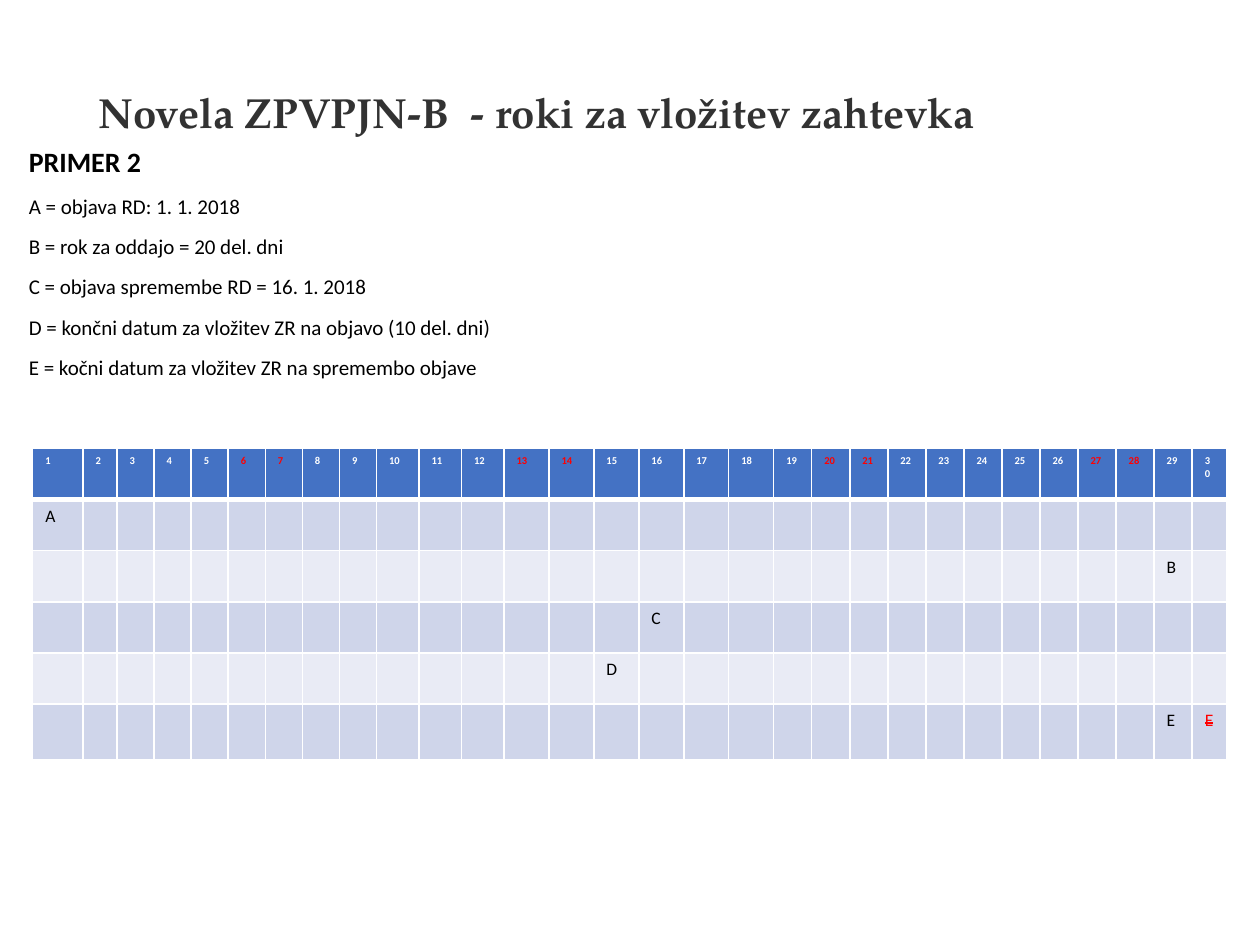
from dataclasses import dataclass, field

from lxml.etree import SubElement
from pptx import Presentation
from pptx.dml.color import RGBColor
from pptx.enum.text import MSO_ANCHOR
from pptx.oxml.ns import qn
from pptx.slide import Slide
from pptx.util import Pt

COLORS = {
    "title": "323232",
    "text": "000000",
    "white": "FFFFFF",
    "holiday": "FF0000",
    "header": "4472C4",
    "odd": "CFD5EA",
    "even": "E9EBF5",
}
WEEKEND_DAYS = {6, 7, 13, 14, 20, 21, 27, 28}
DAY_WIDTHS = [28.8, 19.4] + [21.2] * 7 + [24.3] * 3 + [25.7] * 6 + [21.75] * 11 + [19.8]
ROW_HEIGHTS = [29.2] * 5 + [32]
EVENTS = {
    (1, 1): "A",
    (2, 29): "B",
    (3, 16): "C",
    (4, 15): "D",
    (5, 29): "E",
    (5, 30): "E",
}
STRUCK_EVENT = (5, 30)
LEGEND = [
    "A = objava RD: 1. 1. 2018",
    "B = rok za oddajo = 20 del. dni",
    "C = objava spremembe RD = 16. 1. 2018",
    "D = končni datum za vložitev ZR na objavo (10 del. dni)",
    "E = kočni datum za vložitev ZR na spremembo objave",
]


def write(para, text, size=10, color="text", bold=False, font="Calibri", strike=False):
    span = para.add_run()
    span.text = text
    span.font.size = Pt(size)
    span.font.bold = bold
    span.font.name = font
    span.font.color.rgb = RGBColor.from_string(COLORS[color])
    if strike:
        span.font._element.set("strike", "sngStrike")


@dataclass
class PageBuilder:
    page: Slide
    line_spacing: float = 0.9
    space_before: float = 10
    border: float = 1
    header_border: float = 3
    body_format: dict = field(default_factory=lambda: {"size": 12})

    def text_box(self, left, top, width, height, lines, anchor=MSO_ANCHOR.TOP):
        box = self.page.shapes.add_textbox(Pt(left), Pt(top), Pt(width), Pt(height))
        frame = box.text_frame
        frame.word_wrap = True
        frame.vertical_anchor = anchor
        for index, (text, style) in enumerate(lines):
            para = frame.add_paragraph() if index else frame.paragraphs[0]
            para.line_spacing = self.line_spacing
            if index:
                para.space_before = Pt(self.space_before)
            write(para, text, **style)

    def style_cell(self, cell, row):
        properties = cell._tc.get_or_add_tcPr()
        widths = {
            "a:lnL": self.border,
            "a:lnR": self.border,
            "a:lnT": self.header_border if row == 1 else self.border,
            "a:lnB": self.header_border if row == 0 else self.border,
        }
        for tag, width in widths.items():
            line = SubElement(properties, qn(tag), w=str(Pt(width)))
            fill = SubElement(line, qn("a:solidFill"))
            SubElement(fill, qn("a:srgbClr"), val=COLORS["white"])
        shade = "header" if row == 0 else "odd" if row % 2 else "even"
        cell.fill.solid()
        cell.fill.fore_color.rgb = RGBColor.from_string(COLORS[shade])

    def calendar(self, left, top):
        table = self.page.shapes.add_table(
            len(ROW_HEIGHTS), len(DAY_WIDTHS),
            Pt(left), Pt(top), Pt(sum(DAY_WIDTHS)), Pt(sum(ROW_HEIGHTS)),
        ).table
        for column, width in zip(table.columns, DAY_WIDTHS):
            column.width = Pt(width)
        for row, height in enumerate(ROW_HEIGHTS):
            table.rows[row].height = Pt(height)
            for day in range(1, len(DAY_WIDTHS) + 1):
                cell = table.cell(row, day - 1)
                self.style_cell(cell, row)
                para = cell.text_frame.paragraphs[0]
                if row == 0:
                    color = "holiday" if day in WEEKEND_DAYS else "white"
                    write(para, str(day), size=6, color=color, bold=True)
                elif (row, day) in EVENTS:
                    struck = (row, day) == STRUCK_EVENT
                    color = "holiday" if struck else "text"
                    write(para, EVENTS[row, day], color=color, strike=struck)


def main():
    deck = Presentation()
    deck.slide_width, deck.slide_height = Pt(720), Pt(540)
    builder = PageBuilder(deck.slides.add_slide(deck.slide_layouts[6]))
    title_format = {"size": 24, "color": "title", "bold": True, "font": "TeX Gyre Pagella"}
    builder.text_box(
        49.5, 28.75, 621, 74.2,
        [("Novela ZPVPJN-B  - roki za vložitev zahtevka", title_format)],
        anchor=MSO_ANCHOR.MIDDLE,
    )
    heading = ("PRIMER 2", {"size": 16, "bold": True})
    legend = [(text, builder.body_format) for text in LEGEND]
    builder.text_box(9.4, 81.4, 621, 375.8, [heading] + legend)
    builder.calendar(18.7, 256.3)
    deck.save("out.pptx")


if __name__ == "__main__":
    main()
